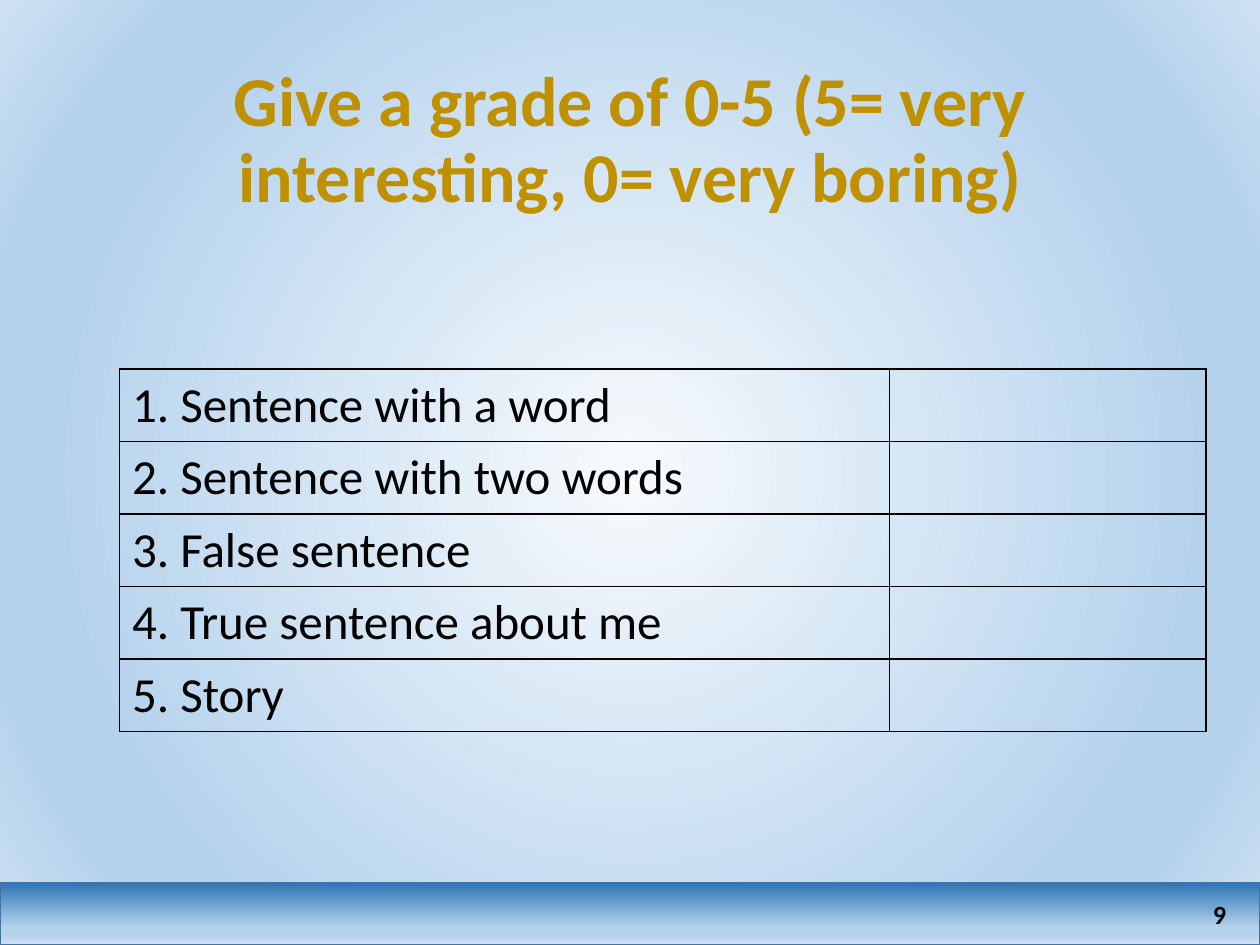
from dataclasses import dataclass
from pptx import Presentation
from pptx.dml.color import RGBColor as Rgb
from pptx.enum.shapes import MSO_SHAPE as Kind
from pptx.enum.text import MSO_ANCHOR as Anchor, PP_ALIGN as Align
from pptx.oxml import parse_xml
from pptx.oxml.ns import nsdecls, qn
from pptx.util import Cm, Pt

TITLE = "Give a grade of 0-5 (5= very interesting, 0= very boring)"
ROWS = [
    "1. Sentence with a word",
    "2. Sentence with two words",
    "3. False sentence",
    "4. True sentence about me",
    "5. Story",
]
PAGE = "9"


@dataclass(frozen=True)
class Theme:
    font: str = "Calibri"
    gold: str = "BF9000"
    rim: str = "806000"
    ink: str = "000000"
    edge: str = "43739E"
    glow: tuple = ((0, "F7FAFD"), (74, "B5D2EC"), (83, "B5D2EC"), (100, "CEE1F2"))
    band: tuple = ((0, "2E75B6"), (72, "B5D2EC"), (83, "B5D2EC"), (100, "CEE1F2"))
    head: int = 40
    body: int = 28
    note: int = 15


LOOK = Theme()
ROUND = '<a:path path="circle"><a:fillToRect l="50000" t="50000" r="50000" b="50000"/></a:path>'
DOWN = '<a:lin ang="5400000" scaled="0"/>'
WIDE, HIGH = 25.4, 19.05
COLS = (15.52, 6.38)
ROW = 1.46
FOOT = 1.25


def line(tag, color, width):
    return parse_xml(
        f'<a:{tag} {nsdecls("a")} w="{Pt(width)}"><a:solidFill>'
        f'<a:srgbClr val="{color}"/></a:solidFill></a:{tag}>'
    )


def shade(root, fill, stops, mode):
    fill.background()
    old = root.find(".//" + qn("a:noFill"))
    marks = "".join(
        f'<a:gs pos="{pos * 1000}"><a:srgbClr val="{color}"/></a:gs>'
        for pos, color in stops
    )
    new = parse_xml(
        f'<a:gradFill {nsdecls("a")} rotWithShape="1"><a:gsLst>{marks}</a:gsLst>{mode}</a:gradFill>'
    )
    old.getparent().replace(old, new)


def write(frame, text, size, color, bold=False, align=Align.LEFT):
    para = frame.paragraphs[0]
    para.alignment = align
    run = para.add_run()
    run.text = text
    font = run.font
    font.name, font.size, font.bold = LOOK.font, Pt(size), bold
    font.color.rgb = Rgb.from_string(color)
    return para, run


def place(shape, *box):
    shape.left, shape.top, shape.width, shape.height = map(Cm, box)


def add_title(slide):
    title = slide.shapes.title
    place(title, 1.75, 1.02, 21.9, 3.68)
    frame = title.text_frame
    frame.word_wrap = True
    frame.vertical_anchor = Anchor.MIDDLE
    para, run = write(frame, TITLE, LOOK.head, LOOK.gold, True, Align.CENTER)
    para.line_spacing = 0.9
    run.font._element.insert(0, line("ln", LOOK.rim, 0.75))


def add_grid(slide):
    grid = slide.shapes.add_table(
        len(ROWS), len(COLS), Cm(2.41), Cm(7.44), Cm(sum(COLS)), Cm(ROW * len(ROWS))
    ).table
    grid.first_row = grid.horz_banding = False
    for col, width in zip(grid.columns, COLS):
        col.width = Cm(width)
    for row, text in zip(grid.rows, ROWS):
        row.height = Cm(ROW)
        for cell in row.cells:
            props = cell._tc.get_or_add_tcPr()
            for side in ("lnL", "lnR", "lnT", "lnB"):
                props.append(line(side, LOOK.ink, 1))
            cell.fill.background()
        write(row.cells[0].text_frame, text, LOOK.body, LOOK.ink)


def add_foot(slide):
    bar = slide.shapes.add_shape(
        Kind.RECTANGLE, 0, Cm(HIGH - FOOT), Cm(WIDE), Cm(FOOT)
    )
    bar.shadow.inherit = False
    shade(bar.element, bar.fill, LOOK.band, DOWN)
    bar.line.color.rgb = Rgb.from_string(LOOK.edge)
    bar.line.width = Pt(1)
    frame = slide.shapes.add_textbox(
        Cm(23.65), Cm(17.98), Cm(1.32), Cm(0.91)
    ).text_frame
    frame.word_wrap = True
    frame.vertical_anchor = Anchor.MIDDLE
    write(frame, PAGE, LOOK.note, LOOK.ink, True, Align.RIGHT)


def main():
    deck = Presentation()
    deck.slide_width, deck.slide_height = Cm(WIDE), Cm(HIGH)
    slide = deck.slides.add_slide(deck.slide_layouts[5])
    shade(slide.element, slide.background.fill, LOOK.glow, ROUND)
    add_title(slide)
    add_grid(slide)
    add_foot(slide)
    deck.save("out.pptx")


if __name__ == "__main__":
    main()
